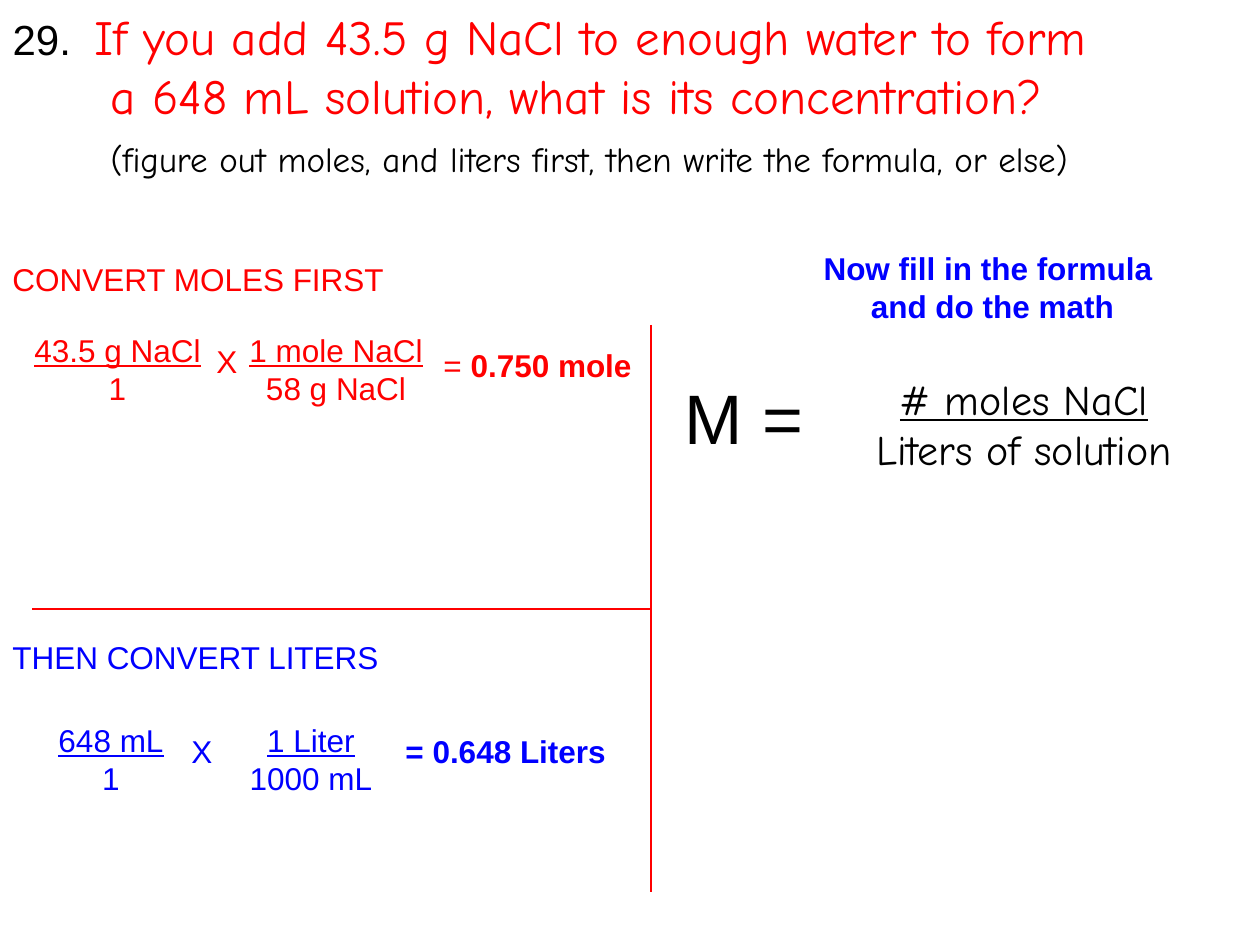
"""Build the worked molarity problem slide."""
import pptx
import pptx.dml.color
import pptx.enum.shapes
import pptx.enum.text
import pptx.oxml
import pptx.oxml.ns
import pptx.util

PX = 914400 / 126
COLORS = {"black": "000000", "red": "FF0000", "blue": "0000FF"}
ALIGN = pptx.enum.text.PP_ALIGN


def px(n):
    return pptx.util.Emu(round(n * PX))


def write(p, runs, color, size=18, name="Arial"):
    for text, extra in runs:
        r = p.add_run()
        r.text = text
        style = {"size": pptx.util.Pt(size), "name": name, "bold": False, **extra}
        for key, value in style.items():
            setattr(r.font, key, value)
        r.font.color.rgb = pptx.dml.color.RGBColor.from_string(COLORS[color])


prs = pptx.Presentation()
prs.slide_width, prs.slide_height = px(1260), px(945)
s = prs.slides.add_slide(prs.slide_layouts[5])

title = s.shapes.title
title.left, title.top, title.width, title.height = px(0), px(0), px(1260), px(254)
tf = title.text_frame
for key, value in {"word_wrap": True, "vertical_anchor": pptx.enum.text.MSO_ANCHOR.TOP,
                   "auto_size": pptx.enum.text.MSO_AUTO_SIZE.NONE}.items():
    setattr(tf, key, value)
question, hint = tf.paragraphs[0], tf.add_paragraph()
write(question, [("29.  ", {})], "black", 24)
write(question, [("If you add 43.5 g NaCl to enough water to form", {})], "red", 28, "Comic Neue")
question.add_line_break()
write(question, [("a 648 mL solution, what is its concentration?", {})], "red", 28, "Comic Neue")
write(hint, [("(figure out moles, and liters first, then write the formula, or else)", {})],
      "black", 20, "Comic Neue")
hint.space_before = pptx.util.Pt(8)
for p, indent in ((question, -98), (hint, 0)):
    p.alignment = ALIGN.LEFT
    pPr = p._p.get_or_add_pPr()
    pPr.set("marL", str(px(98)))
    pPr.set("indent", str(px(indent)))

for x1, y1, x2, y2 in ((651, 325, 651, 892), (651, 609, 32, 609)):
    line = s.shapes.add_connector(pptx.enum.shapes.MSO_CONNECTOR.STRAIGHT,
                                  px(x1), px(y1), px(x2), px(y2))
    line.line.width = pptx.util.Pt(0.75)
    line.line.color.rgb = pptx.dml.color.RGBColor.from_string(COLORS["red"])
    line._element.spPr.append(pptx.oxml.parse_xml(
        f'<a:effectLst {pptx.oxml.ns.nsdecls("a")}/>'))

BOLD, UNDER = {"bold": True}, {"underline": True}
boxes = [
    ((672, 368, 147, 97), "black", 40, "Arial", ALIGN.LEFT, [[("M =", {})]]),
    ((0, 254, 504, 50), "red", 18, "Arial", ALIGN.LEFT, [[("CONVERT MOLES FIRST", {})]]),
    ((0, 632, 504, 50), "blue", 18, "Arial", ALIGN.LEFT, [[("THEN CONVERT LITERS", {})]]),
    ((10, 325, 215, 89), "red", 18, "Arial", ALIGN.CENTER, [[("43.5 g NaCl", UNDER)], [("1", {})]]),
    ((204, 336, 42, 50), "red", 18, "Arial", ALIGN.LEFT, [[("X", {})]]),
    ((231, 325, 210, 89), "red", 18, "Arial", ALIGN.CENTER,
     [[("1 mole NaCl", UNDER)], [("58 g NaCl", {})]]),
    ((840, 367, 368, 113), "black", 24, "Comic Neue", ALIGN.CENTER,
     [[("# moles NaCl", UNDER)], [("Liters of solution", {})]]),
    ((431, 340, 231, 50), "red", 18, "Arial", ALIGN.LEFT, [[("= ", {}), ("0.750 mole", BOLD)]]),
    ((6, 715, 210, 89), "blue", 18, "Arial", ALIGN.CENTER, [[("648 mL", UNDER)], [("1", {})]]),
    ((179, 726, 42, 50), "blue", 18, "Arial", ALIGN.LEFT, [[("X", {})]]),
    ((222, 715, 178, 89), "blue", 18, "Arial", ALIGN.CENTER,
     [[("1 Liter", UNDER)], [("1000 mL", {})]]),
    ((393, 726, 258, 50), "blue", 18, "Arial", ALIGN.LEFT, [[("= 0.648 Liters", BOLD)]]),
    ((777, 243, 431, 89), "blue", 18, "Arial", ALIGN.CENTER,
     [[("Now fill in the formula ", BOLD)], [("and do the math", BOLD)]]),
]
for box, color, size, name, align, lines in boxes:
    tf = s.shapes.add_textbox(*map(px, box)).text_frame
    tf.word_wrap = True
    p = tf.paragraphs[0]
    p.alignment = align
    for i, runs in enumerate(lines):
        if i:
            p.add_line_break()
        write(p, runs, color, size, name)

prs.save("out.pptx")
